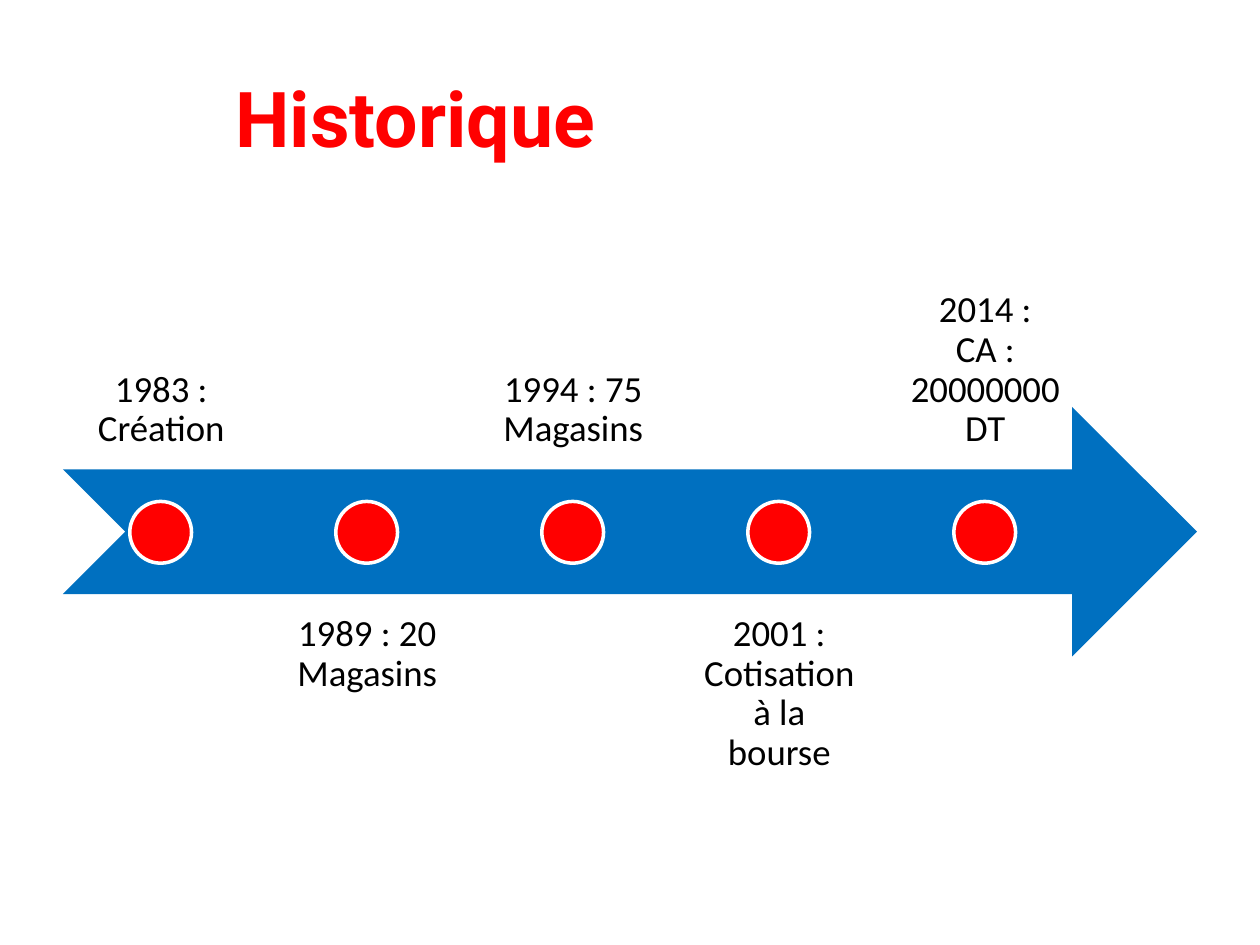
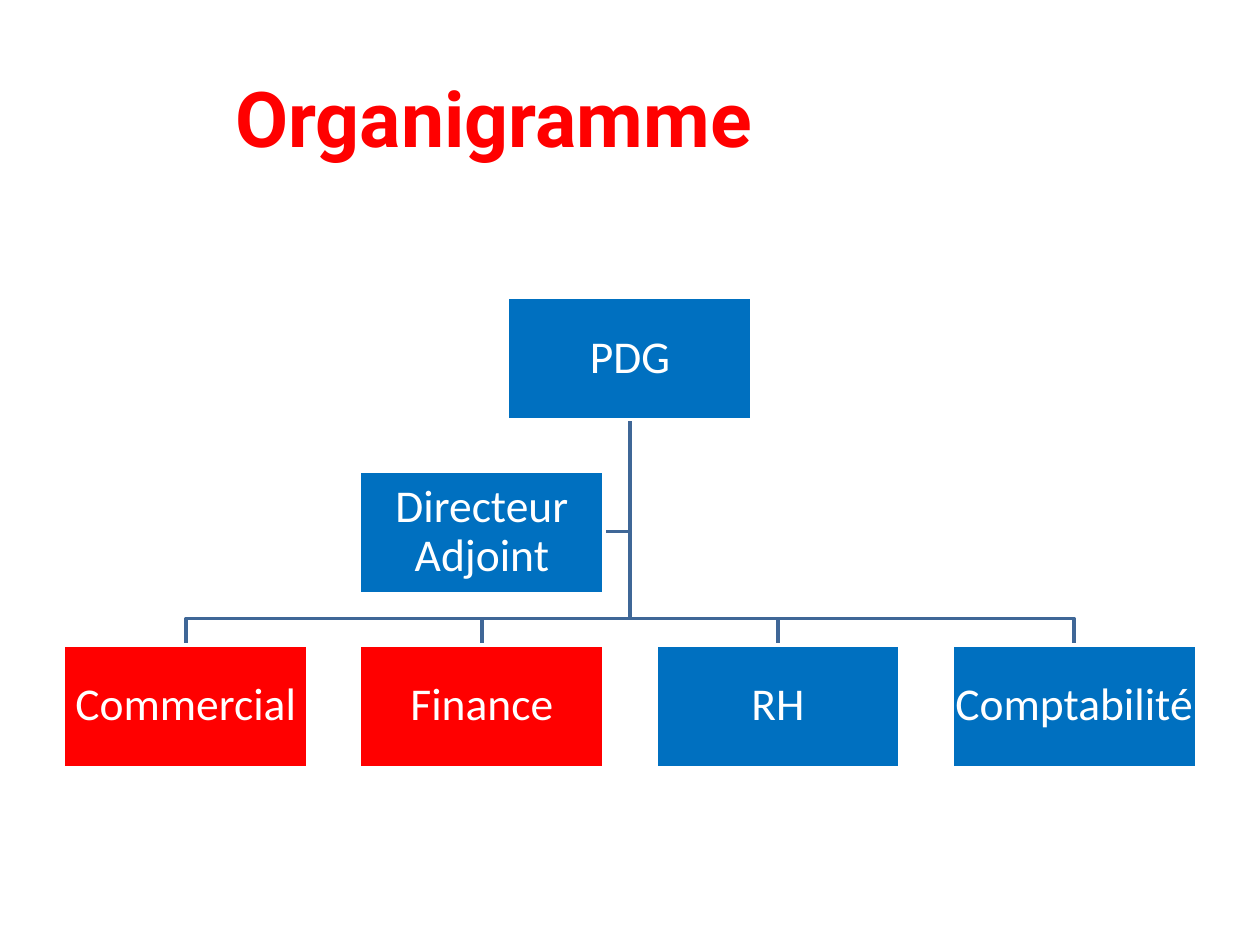
import pptx
import pptx.util
import pptx.dml.color
import pptx.enum.shapes
import pptx.enum.text

Inches = pptx.util.Inches
Pt = pptx.util.Pt
SHAPE = pptx.enum.shapes.MSO_SHAPE
ANCHOR = pptx.enum.text.MSO_ANCHOR
ALIGN = pptx.enum.text.PP_ALIGN

RED, BLUE, WHITE, BLACK, LINK = "FF0000", "0070C0", "FFFFFF", "000000", "3F6797"


def paint(sp, fill=None, line=None):
    sp.shadow.inherit = False
    for color, part in ((fill, sp.fill), (line, sp.line.fill)):
        if color:
            part.solid()
            part.fore_color.rgb = pptx.dml.color.RGBColor.from_string(color)
        else:
            part.background()
    if line:
        sp.line.width = Pt(2)


def write(sp, text, size=26, color=WHITE, font="Calibri", bold=False,
          align=ALIGN.CENTER, anchor=ANCHOR.MIDDLE, inset=0.02, spacing=0.9):
    tf = sp.text_frame
    tf.word_wrap = True
    tf.vertical_anchor = anchor
    tf.margin_left = tf.margin_right = Inches(inset)
    tf.margin_top = tf.margin_bottom = Inches(inset)
    p = tf.paragraphs[0]
    p.alignment = align
    p.line_spacing = spacing
    r = p.add_run()
    r.text = text
    r.font.name = font
    r.font.size = Pt(size)
    r.font.bold = bold
    r.font.color.rgb = pptx.dml.color.RGBColor.from_string(color)


prs = pptx.Presentation()
prs.slide_width = Inches(10)
prs.slide_height = Inches(7.5)

slides = []
for title in ("Historique", "Organigramme"):
    s = prs.slides.add_slide(prs.slide_layouts[6])
    sp = s.shapes.add_textbox(Inches(1.77), Inches(0.3), Inches(8.03), Inches(1.25))
    write(sp, title, size=44, color=RED, font="Roboto", bold=True,
          align=ALIGN.LEFT, inset=0.1, spacing=1.0)
    slides.append(s)
history, chart = slides

arrow = history.shapes.add_shape(
    SHAPE.NOTCHED_RIGHT_ARROW, Inches(0.5), Inches(3.23), Inches(9), Inches(1.98))
paint(arrow, BLUE)

events = ["1983 : Création", "1989 : 20 Magasins", "1994 : 75 Magasins",
          "2001 : Cotisation à la bourse", "2014 : CA : 20000000 DT"]
event_step = 6.54 / 4
for i, event in enumerate(events):
    x = 0.5 + i * event_step
    above = i % 2 == 0
    sp = history.shapes.add_textbox(
        Inches(x), Inches(1.75 if above else 4.72), Inches(1.56), Inches(1.98))
    write(sp, event, size=21, color=BLACK, inset=0.16,
          anchor=ANCHOR.BOTTOM if above else ANCHOR.TOP)
    dot = history.shapes.add_shape(
        SHAPE.OVAL, Inches(x + 0.53), Inches(3.98), Inches(0.49), Inches(0.49))
    paint(dot, RED, WHITE)

box_w, box_h, box_step = 1.94, 0.97, 2.35
trunk_x, trunk_top, bus_y, dept_y = 5, 3.33, 4.91, 5.12
columns = [trunk_x + (i - 1.5) * box_step for i in range(4)]

links = [[(trunk_x, 4.22), (columns[1] + box_w / 2, 4.22)]]
for x in reversed(columns):
    links.append([(trunk_x, bus_y), (x, bus_y), (x, dept_y)])
for points in links:
    fb = chart.shapes.build_freeform(Inches(trunk_x), Inches(trunk_top))
    fb.add_line_segments([(Inches(x), Inches(y)) for x, y in points], close=False)
    paint(fb.convert_to_shape(), line=LINK)

boxes = [("PDG", trunk_x, 2.36, BLUE),
         ("Commercial", columns[0], dept_y, RED),
         ("Finance", columns[1], dept_y, RED),
         ("RH", columns[2], dept_y, BLUE),
         ("Comptabilité", columns[3], dept_y, BLUE),
         ("Directeur Adjoint", columns[1], 3.74, BLUE)]
for name, center, y, color in boxes:
    sp = chart.shapes.add_shape(
        SHAPE.RECTANGLE, Inches(center - box_w / 2), Inches(y), Inches(box_w), Inches(box_h))
    paint(sp, color, WHITE)
    write(sp, name)

prs.save("out.pptx")
